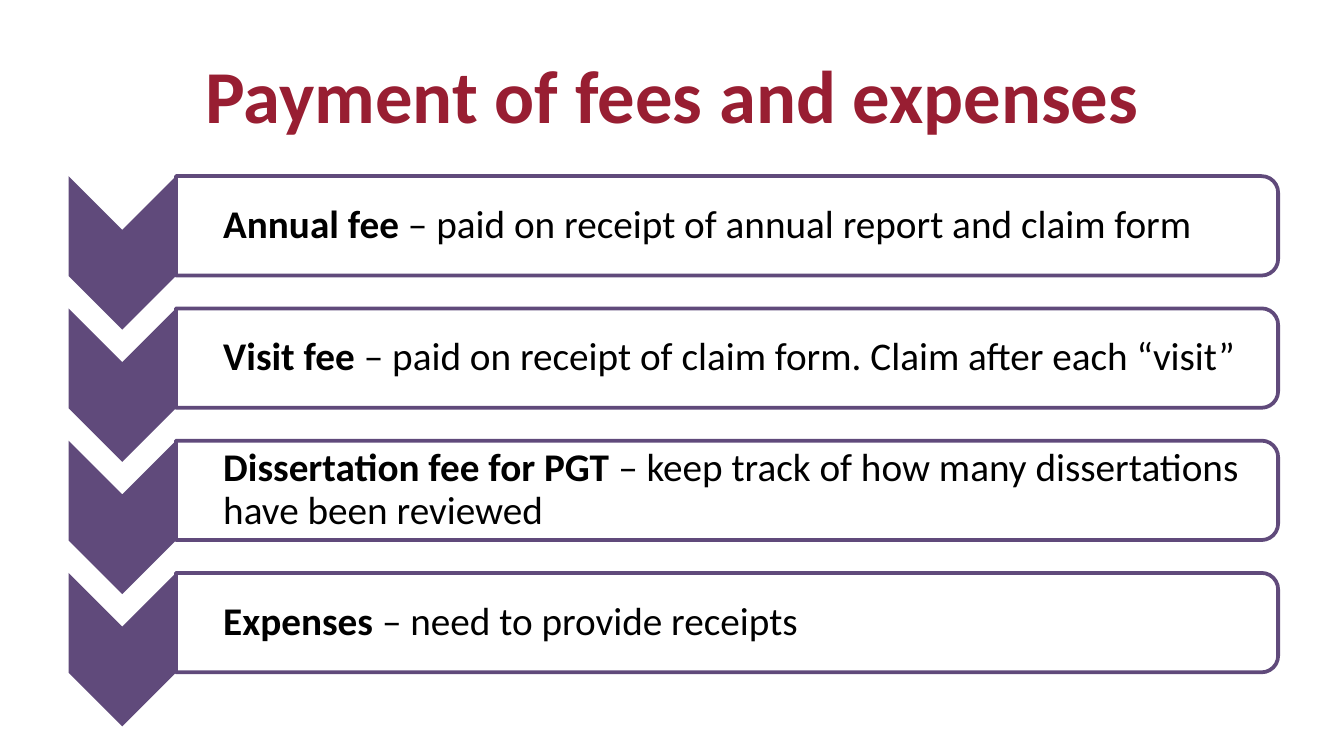
"""Builds the slide on payment of fees and expenses."""
import dataclasses

import pptx
import pptx.dml.color
import pptx.enum.shapes
import pptx.enum.text
import pptx.util
from lxml import etree
from pptx.oxml import ns

Cm = pptx.util.Cm
Pt = pptx.util.Pt
SHAPE = pptx.enum.shapes.MSO_SHAPE


@dataclasses.dataclass(frozen=True)
class Theme:
    """Colours, font and type sizes of the slide."""

    font: str = "Calibri"
    heading: str = "981E32"
    accent: str = "604A7B"
    panel: str = "FFFFFF"
    text: str = "000000"
    title_size: int = 40
    body_size: int = 21


class SlideBuilder:
    """Holds the theme and the current slide and adds its elements."""

    def __init__(self, theme, slide):
        """Keep the theme and the slide to draw on."""
        self.theme = theme
        self.slide = slide

    def rgb(self, value):
        """Return a colour object for a hex value."""
        return pptx.dml.color.RGBColor.from_string(value)

    def run(self, paragraph, words, size, color, bold):
        """Append one formatted run to a paragraph."""
        run = paragraph.add_run()
        run.text = words
        run.font.name = self.theme.font
        run.font.size = Pt(size)
        run.font.bold = bold
        run.font.color.rgb = self.rgb(color)

    def title(self, words):
        """Place and fill the title placeholder."""
        heading = self.slide.shapes.title
        heading.left, heading.top = Cm(1.27), Cm(0.58)
        heading.width, heading.height = Cm(22.86), Cm(2.39)
        frame = heading.text_frame
        frame.vertical_anchor = pptx.enum.text.MSO_ANCHOR.MIDDLE
        paragraph = frame.paragraphs[0]
        paragraph.alignment = pptx.enum.text.PP_ALIGN.CENTER
        self.run(paragraph, words, self.theme.title_size, self.theme.heading, True)

    def turned(self, kind, center_x, center_y, width, height, fill):
        """Add a filled shape turned a quarter clockwise about its centre."""
        shape = self.slide.shapes.add_shape(
            kind, Cm(center_x - width / 2), Cm(center_y - height / 2), Cm(width), Cm(height)
        )
        shape.rotation = 90
        shape.shadow.inherit = False
        shape.fill.solid()
        shape.fill.fore_color.rgb = self.rgb(fill)
        shape.line.fill.background()
        return shape

    def chevron(self, center_y):
        """Add a chevron pointing down."""
        self.turned(SHAPE.CHEVRON, 2.31, center_y, 2.9, 2.03, self.theme.accent)

    def panel(self, center_y):
        """Add an outlined panel rounded at its right end."""
        panel = self.turned(
            SHAPE.ROUND_2_SAME_RECTANGLE, 13.74, center_y, 1.88, 20.83, self.theme.panel
        )
        panel.line.color.rgb = self.rgb(self.theme.accent)
        panel.line.width = Pt(2)
        color = panel.fill._xPr.find(".//" + ns.qn("a:srgbClr"))
        etree.SubElement(color, ns.qn("a:alpha"), val="90000")

    def entry(self, center_y, name, detail):
        """Add a bold name followed by its explanation."""
        height = 1.7
        box = self.slide.shapes.add_textbox(
            Cm(3.33), Cm(center_y - height / 2), Cm(20.73), Cm(height)
        )
        frame = box.text_frame
        frame.word_wrap = True
        frame.vertical_anchor = pptx.enum.text.MSO_ANCHOR.MIDDLE
        frame.margin_left = Cm(0.41)
        frame.margin_right = frame.margin_top = frame.margin_bottom = Cm(0.03)
        paragraph = frame.paragraphs[0]
        paragraph.line_spacing = 0.9
        paragraph._p.get_or_add_pPr().set("marL", str(Cm(0.48)))
        for words, bold in ((name, True), (detail, False)):
            self.run(paragraph, words, self.theme.body_size, self.theme.text, bold)


PAYMENTS = (
    ("Annual fee ", "– paid on receipt of annual report and claim form"),
    ("Visit fee ", "– paid on receipt of claim form. Claim after each “visit”"),
    ("Dissertation fee for PGT ", "– keep track of how many dissertations have been reviewed"),
    ("Expenses ", "– need to provide receipts"),
)


def main():
    """Build and save the presentation."""
    deck = pptx.Presentation()
    deck.slide_width, deck.slide_height = Cm(25.4), Cm(14.29)
    title_only = deck.slide_layouts[5]
    builder = SlideBuilder(Theme(), deck.slides.add_slide(title_only))
    builder.title("Payment of fees and expenses")
    first_row, row_pitch, chevron_drop = 4.27, 2.5, 0.51
    for index, (name, detail) in enumerate(PAYMENTS):
        center_y = first_row + index * row_pitch
        builder.chevron(center_y + chevron_drop)
        builder.panel(center_y)
        builder.entry(center_y, name, detail)
    deck.save("out.pptx")


if __name__ == "__main__":
    main()
